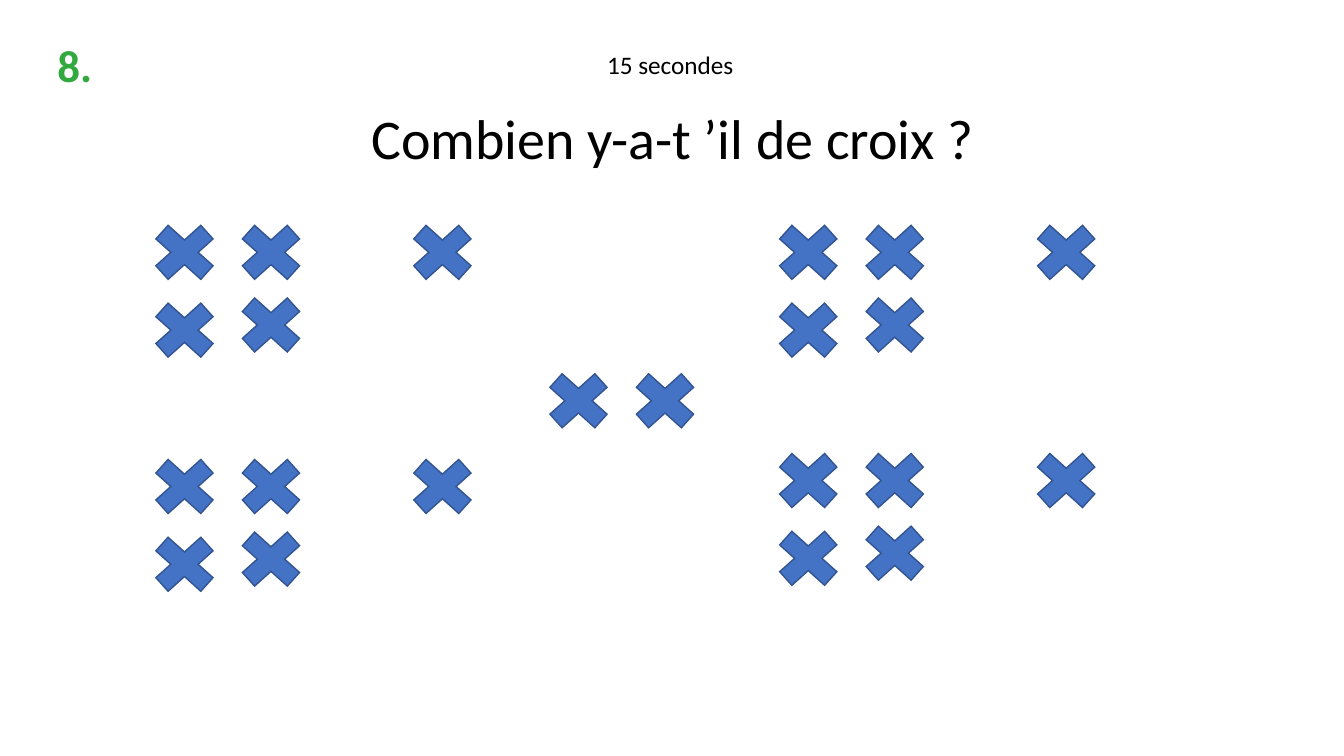
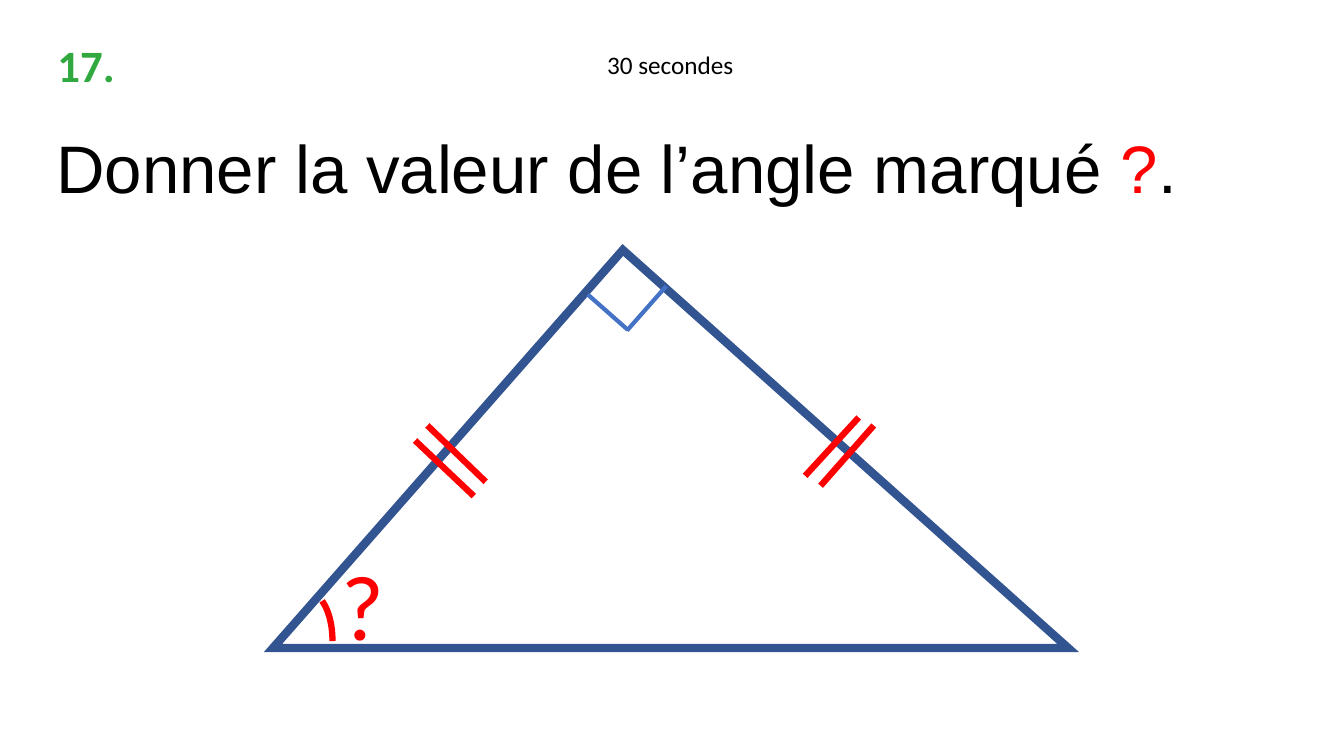
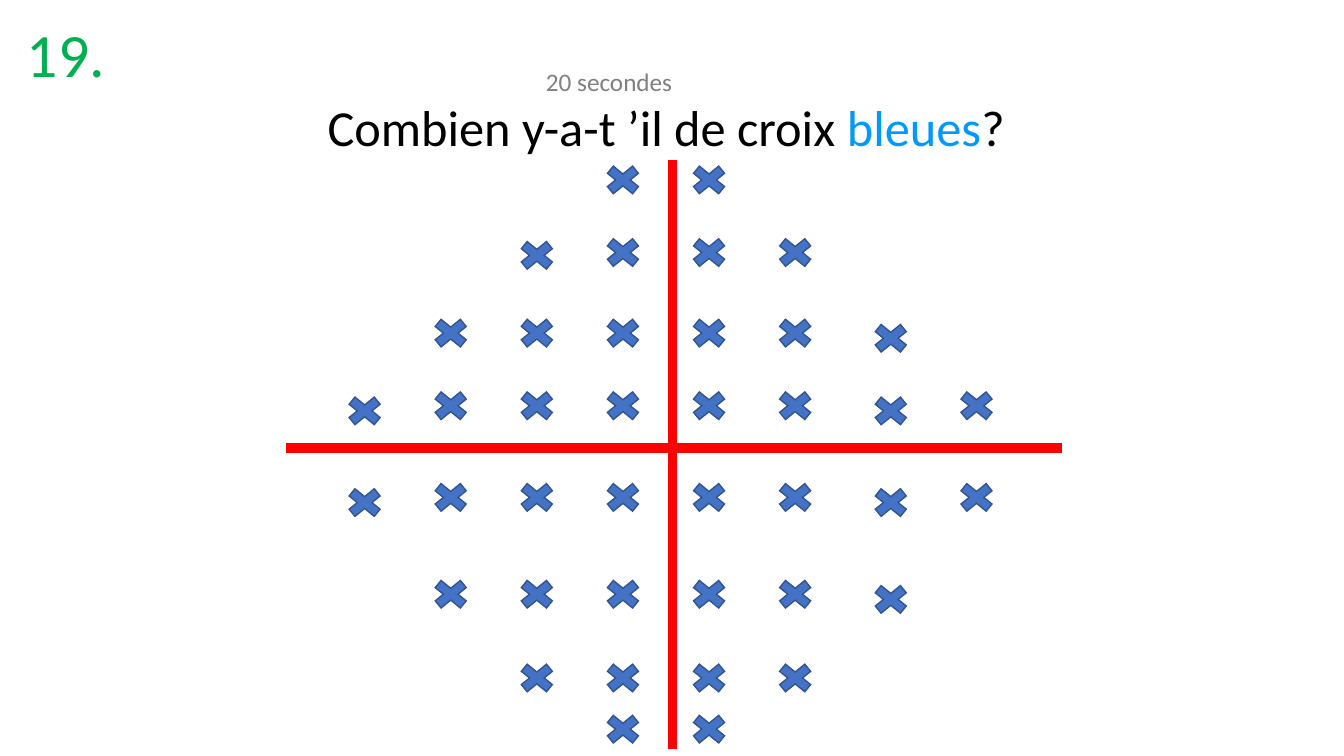
"""Build three quiz slides: two counting exercises and one angle question."""
from dataclasses import dataclass

from lxml import etree
from pptx import Presentation
from pptx.dml.color import RGBColor
from pptx.enum.shapes import MSO_CONNECTOR, MSO_SHAPE
from pptx.enum.text import MSO_ANCHOR, MSO_AUTO_SIZE, PP_ALIGN
from pptx.oxml.ns import qn
from pptx.slide import Slide
from pptx.util import Cm, Pt

LEFT, CENTER = PP_ALIGN.LEFT, PP_ALIGN.CENTER
TOP, NO_AUTOFIT = MSO_ANCHOR.TOP, MSO_AUTO_SIZE.NONE
CROSS, TRIANGLE, ARC = MSO_SHAPE.MATH_MULTIPLY, MSO_SHAPE.ISOSCELES_TRIANGLE, MSO_SHAPE.ARC
STRAIGHT = MSO_CONNECTOR.STRAIGHT
TITLE_ONLY = 5

COLORS = {
    "black": "000000",
    "white": "FFFFFF",
    "red": "FF0000",
    "blue": "4472C4",
    "dark_blue": "325491",
    "sky": "0099FF",
    "number": "31A93F",
    "green": "00B050",
    "gray": "808080",
}


@dataclass(frozen=True)
class Box:
    left: float
    top: float
    width: float
    height: float

    def lengths(self) -> tuple[Cm, Cm, Cm, Cm]:
        return Cm(self.left), Cm(self.top), Cm(self.width), Cm(self.height)


@dataclass(frozen=True)
class Span:
    text: str
    color: str = "black"


@dataclass(frozen=True)
class Segment:
    x1: float
    y1: float
    x2: float
    y2: float
    color: str
    width: float


@dataclass(frozen=True)
class CrossRow:
    top: float
    first: int
    last: int


NUMBER_BOX = Box(1.2, 0.81, 2.01, 1.65)
TIMER_BOX = Box(13.13, 1.12, 7.52, 1.04)

LARGE_CROSS = (2.18, 1.96)
GROUP_OFFSETS = ((0, 0), (2.18, 0), (0, 1.96), (6.5, 0), (2.18, 1.83))
GROUP_ORIGINS = ((3.56, 5.38), (19.28, 5.38), (3.56, 11.28), (19.28, 11.13))
CENTER_PAIR = ((13.49, 9.12), (15.67, 9.12))

SMALL_CROSS = (1.22, 0.99)
COLUMN_LEFTS = [8.58 + 2.17 * column for column in range(6)] + [21.84, 24]
LOWERED_COLUMNS = (0, 6)
LOWERING = 0.13
CROSS_ROWS = (
    CrossRow(4.04, 3, 4),
    CrossRow(5.94, 2, 2),
    CrossRow(5.87, 3, 5),
    CrossRow(7.9, 1, 6),
    CrossRow(9.73, 0, 7),
    CrossRow(12.04, 0, 7),
    CrossRow(14.48, 1, 6),
    CrossRow(16.59, 2, 5),
    CrossRow(17.88, 3, 4),
)
AXES = (
    Segment(16.94, 4.04, 16.94, 18.87, "red", 6.25),
    Segment(7.21, 11.28, 26.77, 11.28, "red", 7.25),
)

TRIANGLE_MARKS = (
    Segment(10.46, 11.1, 11.94, 12.5, "red", 4.5),
    Segment(10.77, 10.72, 12.24, 12.14, "red", 4.5),
    Segment(21.64, 10.52, 20.29, 11.99, "red", 4.5),
    Segment(22.02, 10.72, 20.68, 12.24, "red", 4.5),
    Segment(14.81, 7.42, 15.82, 8.31, "blue", 3),
    Segment(15.8, 8.33, 16.79, 7.21, "blue", 3),
)


def rgb(name: str) -> RGBColor:
    return RGBColor.from_string(COLORS[name])


def write_text(shape, *spans: Span, size: float, font: str = "Calibri",
               bold: bool = False, align=LEFT, wrap: bool = True) -> None:
    frame = shape.text_frame
    frame.word_wrap = wrap
    frame.auto_size = NO_AUTOFIT
    frame.vertical_anchor = TOP
    frame.margin_left = frame.margin_right = Cm(0.25)
    frame.margin_top = frame.margin_bottom = Cm(0.13)
    para = frame.paragraphs[0]
    para.alignment = align
    para.line_spacing = 1.0
    para.space_before = Pt(0)
    for span in spans:
        run = para.add_run()
        run.text = span.text
        run.font.name = font
        run.font.size = Pt(size)
        run.font.bold = bold
        run.font.color.rgb = rgb(span.color)


def add_text(page: Slide, box: Box, *spans: Span, **text_format) -> None:
    write_text(page.shapes.add_textbox(*box.lengths()), *spans, **text_format)


def add_page(deck, box: Box, *spans: Span, **text_format) -> Slide:
    page = deck.slides.add_slide(deck.slide_layouts[TITLE_ONLY])
    title = page.shapes.title
    title.left, title.top, title.width, title.height = box.lengths()
    write_text(title, *spans, **text_format)
    return page


def add_header(page: Slide, number: str, timer: str) -> None:
    add_text(page, NUMBER_BOX, Span(number, "number"), size=32, bold=True)
    add_text(page, TIMER_BOX, Span(timer), size=18, align=CENTER)


def add_figure(page: Slide, kind, box: Box, fill: str | None, line: str, width: float):
    shape = page.shapes.add_shape(kind, *box.lengths())
    shape.shadow.inherit = False
    if fill:
        shape.fill.solid()
        shape.fill.fore_color.rgb = rgb(fill)
    else:
        shape.fill.background()
    shape.line.color.rgb = rgb(line)
    shape.line.width = Pt(width)
    outline = shape.line._get_or_add_ln()
    etree.SubElement(outline, qn("a:miter"), lim="800000")
    return shape


def add_cross(page: Slide, left: float, top: float, size: tuple[float, float]) -> None:
    add_figure(page, CROSS, Box(left, top, *size), "blue", "dark_blue", 1)


def add_segment(page: Slide, segment: Segment) -> None:
    line = page.shapes.add_connector(
        STRAIGHT, Cm(segment.x1), Cm(segment.y1), Cm(segment.x2), Cm(segment.y2))
    line.line.color.rgb = rgb(segment.color)
    line.line.width = Pt(segment.width)
    etree.SubElement(line._element.spPr, qn("a:effectLst"))


def build_cross_groups(deck) -> None:
    page = add_page(deck, Box(2.57, 2.49, 29.08, 1.96),
                    Span("Combien y-a-t ’il de croix ? "), size=40, align=CENTER)
    add_header(page, "8.", "15 secondes")
    for left, top in GROUP_ORIGINS:
        for across, down in GROUP_OFFSETS:
            add_cross(page, left + across, top + down, LARGE_CROSS)
    for left, top in CENTER_PAIR:
        add_cross(page, left, top, LARGE_CROSS)


def build_triangle(deck) -> None:
    page = add_page(deck, Box(1.17, 3.05, 32, 2.34),
                    Span("Donner la valeur de l’angle marqué "), Span("?", "red"), Span("."),
                    size=48, font="Arial")
    add_header(page, "17.", "30 secondes")
    triangle = add_figure(page, TRIANGLE, Box(6.88, 6.3, 20.04, 10.03), "white", "dark_blue", 6)
    triangle.adjustments[0] = 0.44
    for mark in TRIANGLE_MARKS:
        add_segment(page, mark)
    arc = add_figure(page, ARC, Box(7.26, 14.96, 1.12, 2.39), None, "red", 4.5)
    arc.adjustments[0] = 171.86
    add_text(page, Box(8.36, 13.67, 1.65, 3.33), Span("?", "red"), size=66)


def build_cross_grid(deck) -> None:
    page = add_page(deck, Box(2.39, 2.29, 29.08, 1.8),
                    Span("Combien y-a-t ’il de croix "), Span("bleues", "sky"), Span("? "),
                    size=36, align=CENTER)
    add_text(page, Box(0.43, 0.28, 3.68, 2.13), Span("19.", "green"), size=44)
    add_text(page, Box(13.51, 1.55, 3.73, 1.02), Span("20 secondes", "gray"),
             size=18, wrap=False)
    for row in CROSS_ROWS:
        for column in range(row.first, row.last + 1):
            top = row.top + (LOWERING if column in LOWERED_COLUMNS else 0)
            add_cross(page, COLUMN_LEFTS[column], top, SMALL_CROSS)
    for axis in AXES:
        add_segment(page, axis)


def main() -> None:
    deck = Presentation()
    deck.slide_width, deck.slide_height = Cm(33.87), Cm(19.05)
    build_cross_groups(deck)
    build_triangle(deck)
    build_cross_grid(deck)
    deck.save("out.pptx")


if __name__ == "__main__":
    main()
